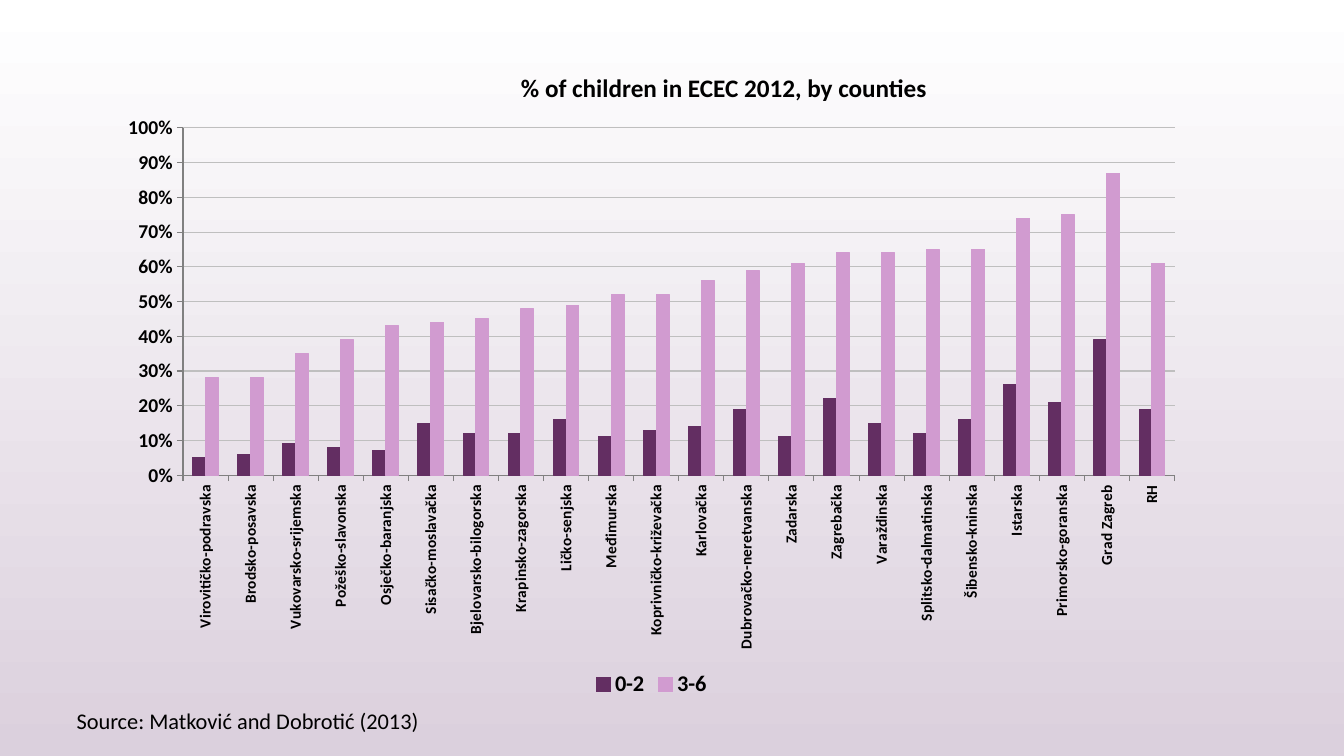
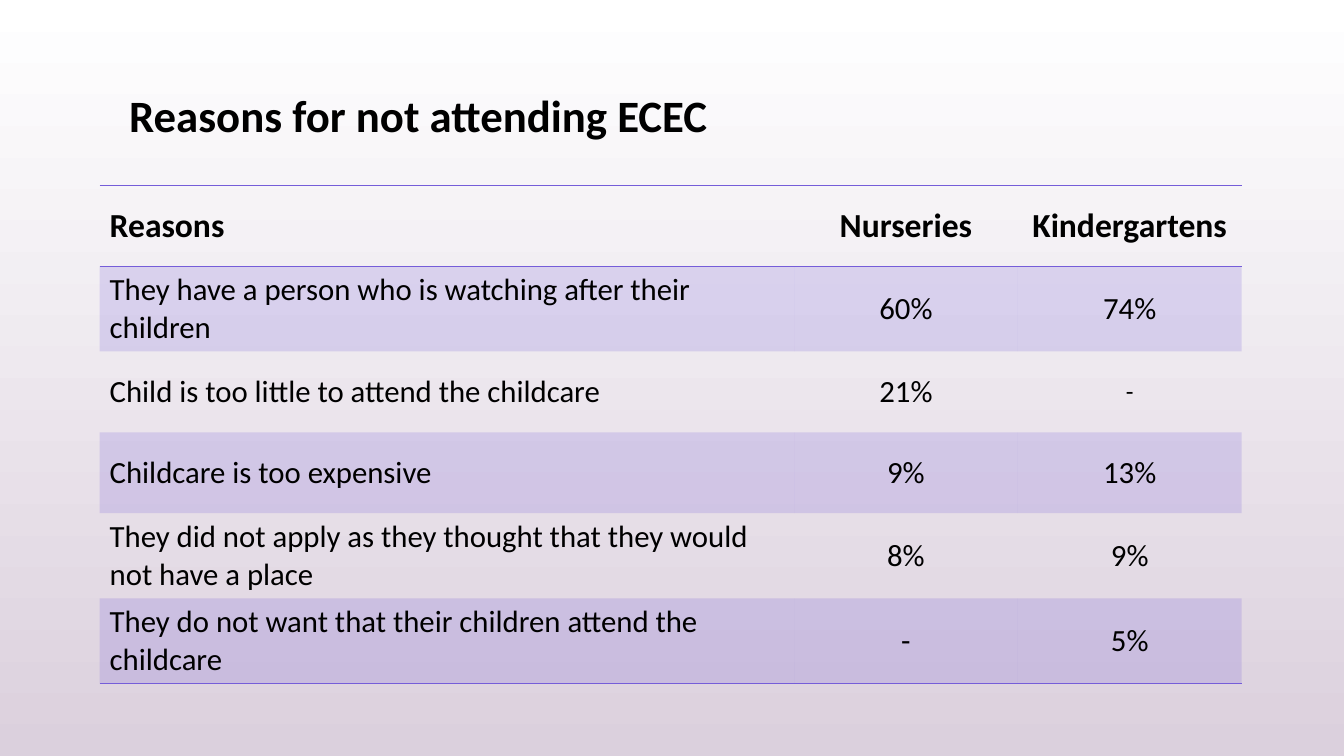
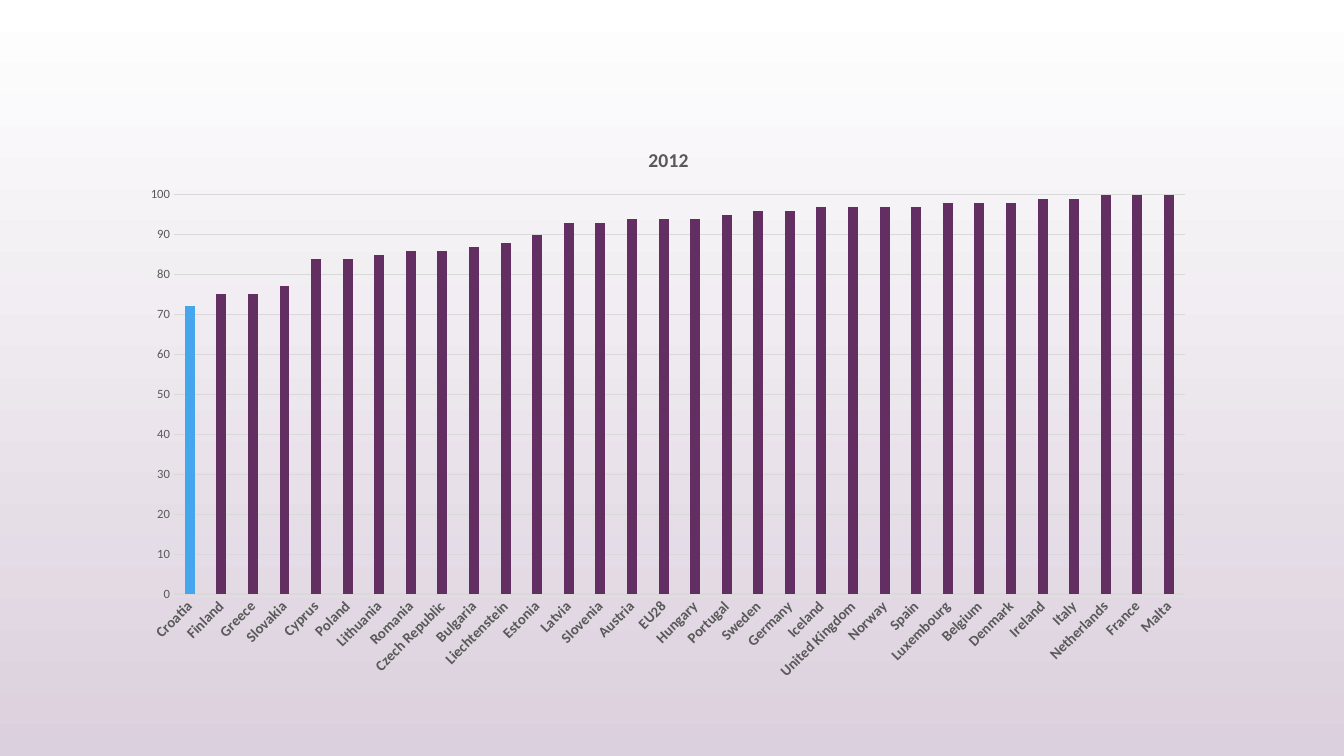
from dataclasses import dataclass

from lxml.etree import Element, SubElement
from pptx import Presentation
from pptx.chart.data import CategoryChartData
from pptx.dml.color import RGBColor
from pptx.enum.chart import XL_CHART_TYPE, XL_LEGEND_POSITION, XL_TICK_MARK
from pptx.enum.text import MSO_ANCHOR, MSO_AUTO_SIZE, PP_ALIGN
from pptx.oxml.ns import qn
from pptx.util import Cm, Pt

COLUMNS = XL_CHART_TYPE.COLUMN_CLUSTERED
BOTTOM = XL_LEGEND_POSITION.BOTTOM
TICK_NONE, TICK_OUT = XL_TICK_MARK.NONE, XL_TICK_MARK.OUTSIDE
LEFT, CENTER = PP_ALIGN.LEFT, PP_ALIGN.CENTER
MIDDLE = MSO_ANCHOR.MIDDLE
NO_FIT, GROW = MSO_AUTO_SIZE.NONE, MSO_AUTO_SIZE.SHAPE_TO_FIT_TEXT
TITLE_ONLY, BLANK = 5, 6
PLAIN_TABLE = "{2D5ABB26-0587-4C30-8999-92F81FD0307C}"


@dataclass(frozen=True)
class Theme:
    font: str = "Calibri"
    ink: str = "000000"
    muted: str = "595959"
    page_top: str = "FFFFFF"
    page_bottom: str = "DBD0DD"
    plum: str = "632E62"
    orchid: str = "D19BD0"
    highlight: str = "45A5ED"
    violet: str = "755DD9"
    axis: str = "808080"
    grid: str = "BFBFBF"
    light_grid: str = "D9D9D9"
    heading: float = 32
    table_head: float = 24
    table_body: float = 22
    subheading: float = 18
    note: float = 16
    label: float = 14
    category: float = 11
    small_category: float = 10.5
    chart_text: float = 10
    small_label: float = 9
    hairline: float = 0.75


@dataclass(frozen=True)
class AxisStyle:
    """Look of the axes of one chart."""
    text: str
    axis_line: str
    grid: str
    tick: object
    category_size: float
    value_size: float
    value_bold: bool
    value_format: str
    top: float
    step: float
    rotation: int
    draw_value_line: bool


def rgb(colour):
    return RGBColor.from_string(colour)


class Deck:
    def __init__(self, theme):
        self.theme = theme
        self.prs = Presentation()
        self.prs.slide_width, self.prs.slide_height = Cm(33.87), Cm(19.05)
        self.slide = None
        # Shared page gradient, white at the top
        page = self.prs.slide_master.background.fill
        page.gradient()
        page.gradient_angle = 270
        for stop, colour in zip(page.gradient_stops, (theme.page_top, theme.page_bottom)):
            stop.color.rgb = rgb(colour)

    def new_slide(self, layout):
        self.slide = self.prs.slides.add_slide(self.prs.slide_layouts[layout])

    def style(self, font, size, bold=False, colour=None):
        font.name, font.size, font.bold = self.theme.font, Pt(size), bold
        font.color.rgb = rgb(colour or self.theme.ink)

    def add_text(self, frame, text, size, bold=False, align=LEFT, colour=None):
        paragraph = frame.paragraphs[0]
        paragraph.alignment = align
        run = paragraph.add_run()
        run.text = text
        self.style(run.font, size, bold, colour)
        return paragraph

    def title(self, text, box, size, align=LEFT):
        heading = self.slide.shapes.title
        heading.left, heading.top, heading.width, heading.height = map(Cm, box)
        frame = heading.text_frame
        frame.auto_size, frame.vertical_anchor = NO_FIT, MIDDLE
        self.add_text(frame, text, size, True, align).line_spacing = 0.9

    def note(self, text, box):
        frame = self.slide.shapes.add_textbox(*map(Cm, box)).text_frame
        frame.word_wrap, frame.auto_size = True, GROW
        self.add_text(frame, text, self.theme.note)

    def columns(self, box, categories, series, axes, plot_area, gap, overlap=0):
        data = CategoryChartData(number_format=axes.value_format)
        data.categories = categories
        for name, values, _ in series:
            data.add_series(name, values)
        chart = self.slide.shapes.add_chart(COLUMNS, *map(Cm, box), data).chart
        self.style(chart.font, self.theme.chart_text)
        chart.has_title = chart.has_legend = False
        plot = chart.plots[0]
        plot.gap_width, plot.overlap, plot.vary_by_categories = gap, overlap, False
        for bars, (_, _, colour) in zip(plot.series, series):
            bars.format.fill.solid()
            bars.format.fill.fore_color.rgb = rgb(colour)
        self.format_axes(chart, axes)
        self.place_plot(chart, plot_area)
        return chart

    def format_axes(self, chart, axes):
        category, value = chart.category_axis, chart.value_axis
        for axis in (category, value):
            axis.major_tick_mark, axis.minor_tick_mark = axes.tick, TICK_NONE
            self.line(axis.format.line, axes.axis_line)
        if not axes.draw_value_line:
            value.format.line.fill.background()
        self.style(category.tick_labels.font, axes.category_size, True, axes.text)
        self.style(value.tick_labels.font, axes.value_size, axes.value_bold, axes.text)
        label_body = category._element.find(qn("c:txPr")).find(qn("a:bodyPr"))
        label_body.set("rot", str(axes.rotation * 60000))
        label_body.set("vert", "horz")
        value.minimum_scale, value.maximum_scale = 0, axes.top
        value.major_unit = axes.step
        value.tick_labels.number_format = axes.value_format
        value.tick_labels.number_format_is_linked = False
        value.has_major_gridlines = True
        self.line(value.major_gridlines.format.line, axes.grid)

    def line(self, line, colour):
        line.color.rgb, line.width = rgb(colour), Pt(self.theme.hairline)

    def place_plot(self, chart, plot_area):
        """Fix the inner plot rectangle, in fractions of the chart."""
        area = chart._chartSpace.chart.plotArea
        for old in area.findall(qn("c:layout")):
            area.remove(old)
        layout = Element(qn("c:layout"))
        area.insert(0, layout)
        manual = SubElement(layout, qn("c:manualLayout"))
        settings = [("layoutTarget", "inner"), ("xMode", "edge"), ("yMode", "edge")]
        settings += zip("xywh", plot_area)
        for tag, setting in settings:
            SubElement(manual, qn("c:" + tag)).set("val", str(setting))

    def table(self, corner, widths, row_height, rows):
        left, top = corner
        frame = self.slide.shapes.add_table(
            len(rows), len(widths), Cm(left), Cm(top),
            Cm(sum(widths)), Cm(row_height * len(rows)))
        table = frame.table
        table._tbl.tblPr.find(qn("a:tableStyleId")).text = PLAIN_TABLE
        for column, width in zip(table.columns, widths):
            column.width = Cm(width)
        for r, row in enumerate(rows):
            table.rows[r].height = Cm(row_height)
            head = r == 0
            edges = ("lnT", "lnB") if head else ("lnB",) if r == len(rows) - 1 else ()
            size = self.theme.table_head if head else self.theme.table_body
            for c, text in enumerate(row):
                cell = table.cell(r, c)
                cell.vertical_anchor = MIDDLE
                self.add_text(cell.text_frame, text, size, head, CENTER if c else LEFT)
                self.paint_cell(cell, edges, shaded=r % 2 == 1)
        return table

    def paint_cell(self, cell, edges, shaded):
        properties = cell._tc.get_or_add_tcPr()
        for edge in edges:
            border = SubElement(properties, qn("a:" + edge), w=str(Pt(1)))
            fill = SubElement(border, qn("a:solidFill"))
            SubElement(fill, qn("a:srgbClr"), val=self.theme.violet)
        if not shaded:
            cell.fill.background()
            return
        cell.fill.solid()
        cell.fill.fore_color.rgb = rgb(self.theme.violet)
        tint = properties.find(qn("a:solidFill"))[0]
        SubElement(tint, qn("a:alpha"), val="20000")


COUNTIES = {
    "Virovitičko-podravska": (0.05, 0.28), "Brodsko-posavska": (0.06, 0.28),
    "Vukovarsko-srijemska": (0.09, 0.35), "Požeško-slavonska": (0.08, 0.39),
    "Osječko-baranjska": (0.07, 0.43), "Sisačko-moslavačka": (0.15, 0.44),
    "Bjelovarsko-bilogorska": (0.12, 0.45), "Krapinsko-zagorska": (0.12, 0.48),
    "Ličko-senjska": (0.16, 0.49), "Međimurska": (0.11, 0.52),
    "Koprivničko-križevačka": (0.13, 0.52), "Karlovačka": (0.14, 0.56),
    "Dubrovačko-neretvanska": (0.19, 0.59), "Zadarska": (0.11, 0.61),
    "Zagrebačka": (0.22, 0.64), "Varaždinska": (0.15, 0.64),
    "Splitsko-dalmatinska": (0.12, 0.65), "Šibensko-kninska": (0.16, 0.65),
    "Istarska": (0.26, 0.74), "Primorsko-goranska": (0.21, 0.75),
    "Grad Zagreb": (0.39, 0.87), "RH": (0.19, 0.61),
}

REASONS = [
    ("Reasons", "Nurseries", "Kindergartens"),
    ("They have a person who is watching after their children", "60%", "74%"),
    ("Child is too little to attend the childcare", "21%", "-"),
    ("Childcare is too expensive", "9%", "13%"),
    ("They did not apply as they thought that they would not have a place", "8%", "9%"),
    ("They do not want that their children attend the childcare", "-", "5%"),
]

COUNTRIES = {
    "Croatia": 72, "Finland": 75, "Greece": 75, "Slovakia": 77, "Cyprus": 84,
    "Poland": 84, "Lithuania": 85, "Romania": 86, "Czech Republic": 86,
    "Bulgaria": 87, "Liechtenstein": 88, "Estonia": 90, "Latvia": 93,
    "Slovenia": 93, "Austria": 94, "EU28": 94, "Hungary": 94, "Portugal": 95,
    "Sweden": 96, "Germany": 96, "Iceland": 97, "United Kingdom": 97,
    "Norway": 97, "Spain": 97, "Luxembourg": 98, "Belgium": 98, "Denmark": 98,
    "Ireland": 99, "Italy": 99, "Netherlands": 100, "France": 100, "Malta": 100,
}


def counties_slide(deck):
    theme = deck.theme
    deck.new_slide(TITLE_ONLY)
    deck.title("% of children in ECEC 2012, by counties",
               (12.67, 1.7, 11.15, 1.09), theme.subheading, CENTER)
    nursery, kindergarten = zip(*COUNTIES.values())
    axes = AxisStyle(
        text=theme.ink, axis_line=theme.axis, grid=theme.grid, tick=TICK_OUT,
        category_size=theme.category, value_size=theme.label, value_bold=True,
        value_format="0%", top=1, step=0.1, rotation=-90, draw_value_line=True)
    attendance = deck.columns(
        (2.69, 2.62, 27.46, 15.09), list(COUNTIES),
        [("0-2", nursery, theme.plum), ("3-6", kindergarten, theme.orchid)],
        axes, plot_area=(0.07, 0.04, 0.91, 0.58), gap=150)
    for bars, colour in zip(attendance.plots[0].series, (theme.plum, theme.orchid)):
        deck.line(bars.format.line, colour)
    attendance.has_legend = True
    attendance.legend.position = BOTTOM
    attendance.legend.include_in_layout = False
    deck.style(attendance.legend.font, theme.note, True)
    deck.note("Source: Matković and Dobrotić (2013)", (1.68, 17.7, 11, 0.94))


def reasons_slide(deck):
    deck.new_slide(TITLE_ONLY)
    deck.title("Reasons for not attending ECEC", (3, 1.88, 28.32, 2.21), deck.theme.heading)
    reasons = deck.table((2.51, 4.67), (17.5, 5.64, 5.64), 2.04, REASONS)
    # The missing kindergarten share is set smaller
    missing_share = reasons.cell(2, 2).text_frame.paragraphs[0].runs[0]
    missing_share.font.size = Pt(deck.theme.subheading)


def countries_slide(deck):
    theme = deck.theme
    deck.new_slide(BLANK)
    axes = AxisStyle(
        text=theme.muted, axis_line=theme.light_grid, grid=theme.light_grid,
        tick=TICK_NONE, category_size=theme.small_category,
        value_size=theme.small_label, value_bold=False, value_format="General",
        top=100, step=10, rotation=-45, draw_value_line=False)
    coverage = deck.columns(
        (3.3, 3.18, 27.1, 14.38), list(COUNTRIES),
        [("2012", list(COUNTRIES.values()), theme.plum)],
        axes, plot_area=(0.04, 0.12, 0.94, 0.7), gap=219, overlap=-27)
    coverage.has_title = True
    coverage.chart_title.include_in_layout = False
    deck.add_text(coverage.chart_title.text_frame, "2012", theme.label, True, CENTER, theme.muted)
    # Croatia stands out
    croatia = coverage.plots[0].series[0].points[0].format.fill
    croatia.solid()
    croatia.fore_color.rgb = rgb(theme.highlight)


def main():
    deck = Deck(Theme())
    counties_slide(deck)
    reasons_slide(deck)
    countries_slide(deck)
    deck.prs.save("out.pptx")


if __name__ == "__main__":
    main()
